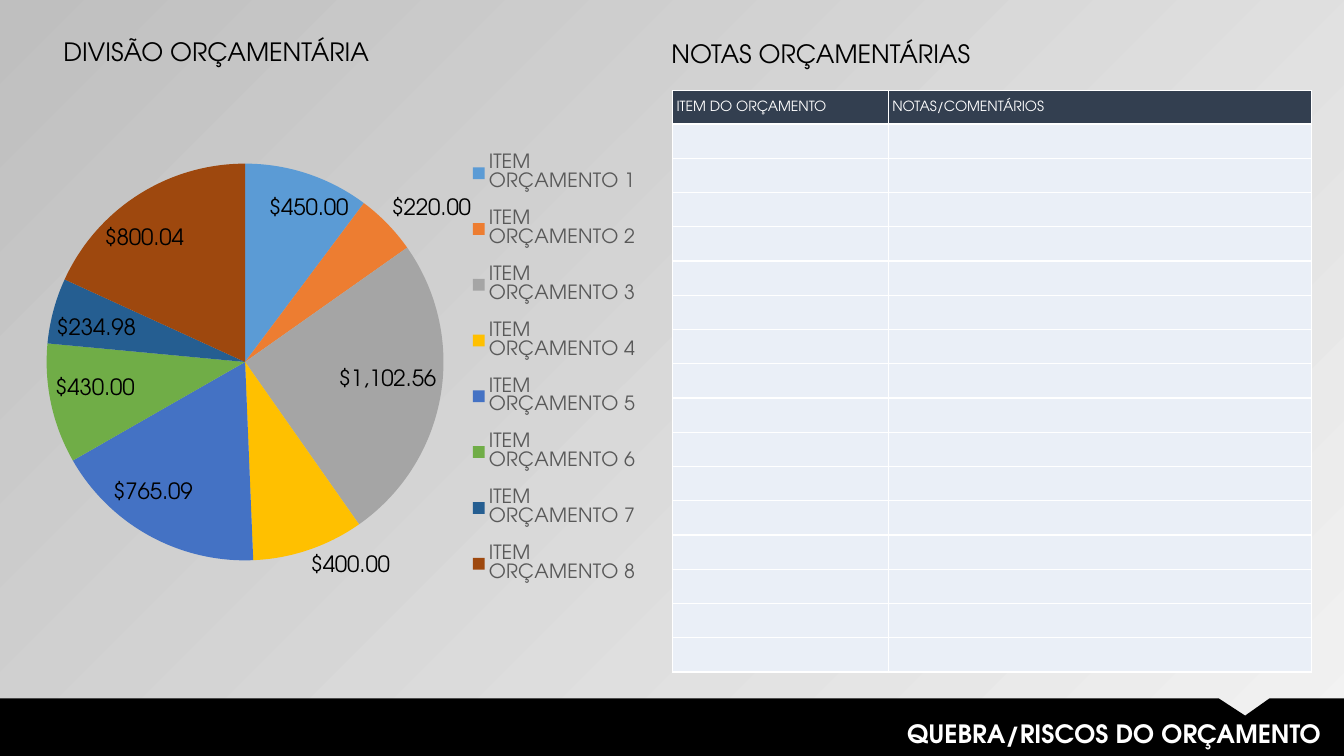
import pptx
import pptx.util
import pptx.chart.data
import pptx.dml.color
import pptx.enum.chart
import pptx.enum.text
import pptx.oxml
import pptx.oxml.ns

EMU_PER_PX = 9144
FONT = "TeX Gyre Adventor"
BLACK, WHITE, GREY = "000000", "FFFFFF", "595959"
HEADER_FILL, ROW_FILL = "333F50", "EAEFF7"
SLICE_COLOURS = ["5B9BD5", "ED7D31", "A5A5A5", "FFC000",
                 "4472C4", "70AD47", "255E91", "9E480E"]
BUDGET = [450, 220, 1102.56, 400, 765.09, 430, 234.98, 800.04]


def px(length):
    return pptx.util.Emu(length * EMU_PER_PX)


def colour(value):
    return pptx.dml.color.RGBColor.from_string(value)


def apply(target, values):
    for name, value in values.items():
        setattr(target, name, value)


def paint(fill, value):
    fill.solid()
    fill.fore_color.rgb = colour(value)


def xml(markup):
    return pptx.oxml.parse_xml(markup)


class BudgetSlide:
    def __init__(self, presentation):
        self.slide = presentation.slides.add_slide(presentation.slide_layouts[6])
        self.shapes = self.slide.shapes

    def style(self, font, size, value, bold=False):
        apply(font, {"name": FONT, "size": pptx.util.Pt(size), "bold": bold})
        font.color.rgb = colour(value)

    def background(self, start, end, angle):
        fill = self.slide.background.fill
        fill.gradient()
        fill.gradient_angle = angle
        for stop, value in zip(fill.gradient_stops, (start, end)):
            stop.color.rgb = colour(value)

    def outline(self, points, value):
        builder = self.shapes.build_freeform(*points[0], scale=EMU_PER_PX)
        builder.add_line_segments(points[1:], close=True)
        band = builder.convert_to_shape()
        band.shadow.inherit = False
        paint(band.fill, value)
        band.line.fill.background()

    def text(self, words, box, value, bold=False, align="LEFT"):
        frame = self.shapes.add_textbox(*map(px, box)).text_frame
        apply(frame, {"word_wrap": True,
                      "auto_size": pptx.enum.text.MSO_AUTO_SIZE.SHAPE_TO_FIT_TEXT})
        paragraph = frame.paragraphs[0]
        paragraph.alignment = pptx.enum.text.PP_ALIGN[align]
        run = paragraph.add_run()
        run.text = words
        self.style(run.font, 18, value, bold)

    def place(self, parent, area, inner=False):
        layout = parent.find(pptx.oxml.ns.qn("c:layout"))
        if layout is not None:
            parent.remove(layout)
        target = '<c:layoutTarget val="inner"/>' if inner else ""
        modes = '<c:xMode val="edge"/><c:yMode val="edge"/>'
        sides = "".join(f'<c:{side} val="{share}"/>' for side, share in zip("xywh", area))
        return xml(f'<c:layout {pptx.oxml.ns.nsdecls("c")}><c:manualLayout>'
                   f'{target}{modes}{sides}</c:manualLayout></c:layout>')

    def pie(self, categories, values, colours, box):
        data = pptx.chart.data.CategoryChartData()
        data.categories = categories
        data.add_series("Series 1", values)
        chart = self.shapes.add_chart(
            pptx.enum.chart.XL_CHART_TYPE.PIE, *map(px, box), data).chart
        apply(chart, {"has_title": False, "has_legend": True})
        self.style(chart.font, 10, BLACK)
        apply(chart.legend, {"position": pptx.enum.chart.XL_LEGEND_POSITION.RIGHT,
                             "include_in_layout": False})
        self.style(chart.legend.font, 14, GREY)
        plot = chart.plots[0]
        apply(plot, {"vary_by_categories": True, "has_data_labels": True})
        apply(plot.data_labels, {
            "show_value": True, "show_percentage": False,
            "number_format": '"$"#,##0.00', "number_format_is_linked": False,
            "position": pptx.enum.chart.XL_LABEL_POSITION.BEST_FIT})
        self.style(plot.data_labels.font, 16, BLACK)
        for index, value in enumerate(colours):
            paint(plot.series[0].points[index].format.fill, value)
        area = chart.element.find(".//" + pptx.oxml.ns.qn("c:plotArea"))
        area.insert(0, self.place(area, (0.18, 0.06, 0.52, 0.94), inner=True))
        legend = chart.legend._element
        key = self.place(legend, (0.72, 0.18, 0.25, 0.72))
        legend.find(pptx.oxml.ns.qn("c:legendPos")).addnext(key)

    def border(self, cell, value, width):
        properties = cell._tc.get_or_add_tcPr()
        for index, side in enumerate(("lnL", "lnR", "lnT", "lnB")):
            properties.insert(index, xml(
                f'<a:{side} {pptx.oxml.ns.nsdecls("a")} w="{pptx.util.Pt(width)}">'
                f'<a:solidFill><a:srgbClr val="{value}"/></a:solidFill></a:{side}>'))

    def table(self, headings, widths, heights, box):
        table = self.shapes.add_table(len(heights), len(widths), *map(px, box)).table
        for column, width in zip(table.columns, widths):
            column.width = px(width)
        for row, height in zip(table.rows, heights):
            row.height = px(height)
        for cell in table.iter_cells():
            apply(cell, {"margin_left": px(4), "margin_right": 0, "margin_top": 0,
                         "margin_bottom": 0,
                         "vertical_anchor": pptx.enum.text.MSO_ANCHOR.MIDDLE})
            paint(cell.fill, ROW_FILL)
            self.border(cell, WHITE, 1)
        for cell, heading in zip(table.rows[0].cells, headings):
            paint(cell.fill, HEADER_FILL)
            run = cell.text_frame.paragraphs[0].add_run()
            run.text = heading
            self.style(run.font, 10, WHITE)


def main():
    presentation = pptx.Presentation()
    apply(presentation, {"slide_width": px(1333), "slide_height": px(750)})
    budget = BudgetSlide(presentation)
    budget.background("F2F2F2", "BFBFBF", 135)
    budget.outline([(0, 693), (1209, 693), (1235, 710), (1259, 693),
                    (1333, 693), (1333, 750), (0, 750)], BLACK)
    budget.text("QUEBRA/RISCOS DO ORÇAMENTO", (414, 708, 906, 40), WHITE,
                bold=True, align="RIGHT")
    items = [f"ITEM ORÇAMENTO {number}" for number in range(1, len(BUDGET) + 1)]
    budget.pie(items, BUDGET, SLICE_COLOURS, (-90, 20, 757, 640))
    budget.text("DIVISÃO ORÇAMENTÁRIA", (53, 31, 444, 40), BLACK)
    budget.table(["ITEM DO ORÇAMENTO", "NOTAS/COMENTÁRIOS"], [214, 420],
                 [33] + [34] * 16, (667, 90, 634, 582))
    budget.text("NOTAS ORÇAMENTÁRIAS", (656, 33, 444, 37), BLACK)
    presentation.save("out.pptx")


if __name__ == "__main__":
    main()
